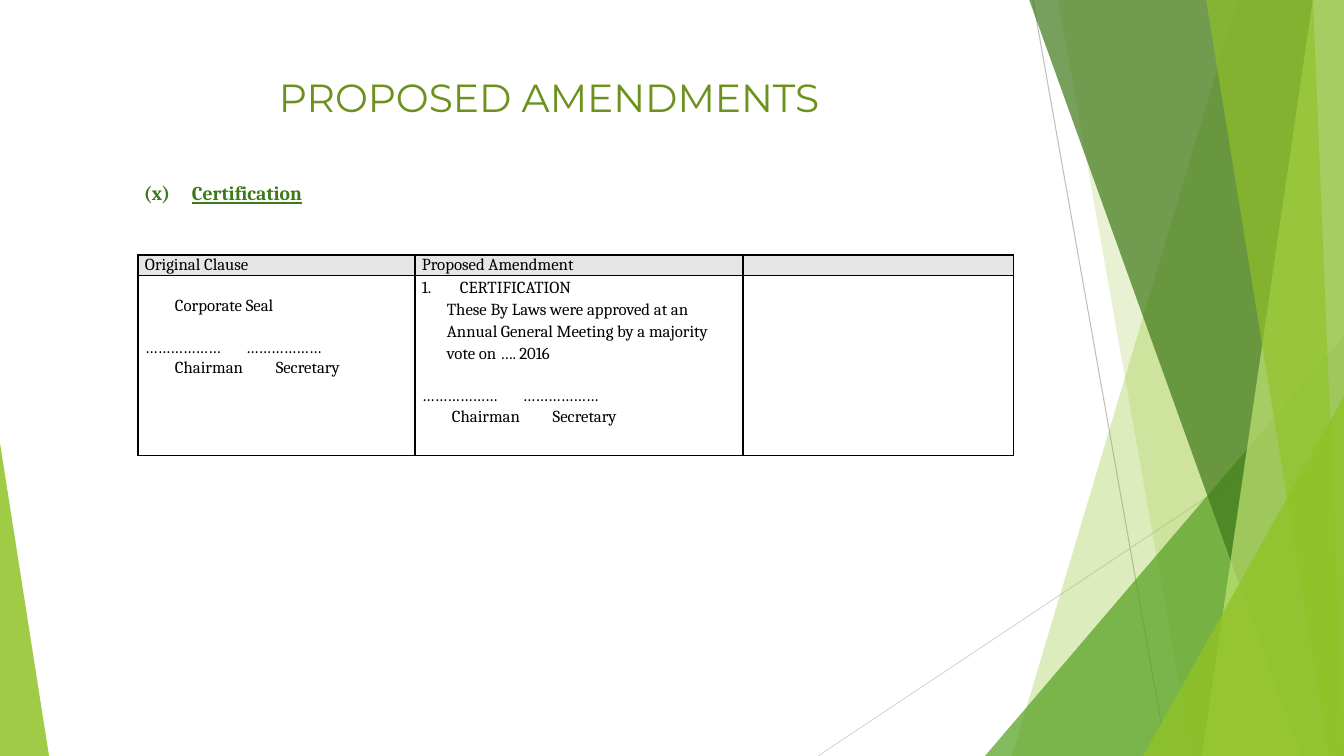
from lxml.etree import SubElement
from pptx import Presentation
from pptx.dml.color import RGBColor
from pptx.enum.shapes import MSO_CONNECTOR, MSO_SHAPE
from pptx.enum.text import MSO_ANCHOR, PP_ALIGN
from pptx.oxml.ns import qn
from pptx.util import Emu, Pt

SCALE = 914400 / 100.8
WIDTH, HEIGHT = 1344, 756
LIME, GREEN, FOREST, PALE = "90C226", "54A021", "3F7819", "C0E474"
BLACK, HEADER_GREY = "000000", "E7E6E6"


def px(length):
    return Emu(round(length * SCALE))


def colour(value):
    return RGBColor.from_string(value)


class SlideBuilder:
    """Holds the text style and the current slide."""

    body_font = "Cambria"
    title_font = "Montserrat"

    def __init__(self, page):
        self.page = page
        self.shapes = page.shapes

    def line(self, start, end, shade):
        connector = self.shapes.add_connector(
            MSO_CONNECTOR.STRAIGHT, *map(px, start + end))
        connector.line.color.rgb = colour(shade)
        connector.line.width = Pt(0.75)
        SubElement(connector._element.spPr, qn("a:effectLst"))

    def paint(self, shape, shade, opacity):
        shape.shadow.inherit = False
        shape.fill.solid()
        shape.fill.fore_color.rgb = colour(shade)
        shape.line.fill.background()
        tint = shape._element.spPr.find(qn("a:solidFill"))[0]
        SubElement(tint, qn("a:alpha"), val=str(opacity * 1000))

    def band(self, top_left, bottom_left, shade, opacity, top_right=WIDTH):
        """A full-height panel that reaches the right edge."""
        outline = self.shapes.build_freeform(top_left, -1, SCALE)
        outline.add_line_segments(
            [(top_right, -1), (WIDTH, HEIGHT), (bottom_left, HEIGHT)])
        self.paint(outline.convert_to_shape(), shade, opacity)

    def triangle(self, left, top, width, apex, shade, opacity):
        """A triangle that stands on the bottom edge."""
        shape = self.shapes.add_shape(
            MSO_SHAPE.ISOSCELES_TRIANGLE,
            *map(px, (left, top, width, HEIGHT - top)))
        shape.adjustments[0] = apex
        self.paint(shape, shade, opacity)

    def style(self, para, size, shade, font=None, bold=False):
        para.font.name = font or self.body_font
        para.font.size = Pt(size)
        para.font.bold = bold
        para.font.color.rgb = colour(shade)

    def text_box(self, left, top, width, height, anchor):
        box = self.shapes.add_textbox(*map(px, (left, top, width, height)))
        box.text_frame.word_wrap = True
        box.text_frame.vertical_anchor = anchor
        return box.text_frame.paragraphs[0]

    def title(self, text, *place):
        para = self.text_box(*place, MSO_ANCHOR.TOP)
        para.text = text
        para.alignment = PP_ALIGN.CENTER
        self.style(para, 28, "6C921D", self.title_font)

    def heading(self, number, text, *place):
        para = self.text_box(*place, MSO_ANCHOR.MIDDLE)
        para.add_run().text = number + "\t"
        span = para.add_run()
        span.text = text
        span.font.underline = True
        self.style(para, 14, FOREST, bold=True)
        self.tab_stop(para, 48)

    def tab_stop(self, para, position):
        properties = para._p.get_or_add_pPr()
        stops = properties.makeelement(qn("a:tabLst"), {})
        SubElement(stops, qn("a:tab"), pos=str(px(position)), algn="l")
        defaults = properties.find(qn("a:defRPr"))
        if defaults is None:
            properties.append(stops)
        else:
            defaults.addprevious(stops)

    def table(self, left, top, columns, rows):
        frame = self.shapes.add_table(
            len(rows), len(columns),
            *map(px, (left, top, sum(columns), sum(rows))))
        table = frame.table
        table.first_row = table.horz_banding = False
        for column, width in zip(table.columns, columns):
            column.width = px(width)
        for row, height in zip(table.rows, rows):
            row.height = px(height)
        for cell in table.iter_cells():
            cell.margin_left = cell.margin_right = px(7)
            cell.margin_top = cell.margin_bottom = 0
            self.borders(cell)
            cell.fill.background()
            SubElement(cell.text_frame.paragraphs[0]._p,
                       qn("a:endParaRPr"), sz="1200")
        return table

    def borders(self, cell):
        properties = cell._tc.get_or_add_tcPr()
        for side in ("lnL", "lnR", "lnT", "lnB"):
            edge = SubElement(properties, qn("a:" + side), w=str(Pt(1)))
            fill = SubElement(edge, qn("a:solidFill"))
            SubElement(fill, qn("a:srgbClr"), val=BLACK)

    def header(self, cell, text):
        cell.fill.solid()
        cell.fill.fore_color.rgb = colour(HEADER_GREY)
        if text:
            para = cell.text_frame.paragraphs[0]
            para.text = text
            self.style(para, 12, BLACK)

    def clause(self, cell, lines):
        """Lines are (text, indent, line spacing, gap before, kind)."""
        frame = cell.text_frame
        for index, (text, indent, spacing, gap, kind) in enumerate(lines):
            para = frame.add_paragraph() if index else frame.paragraphs[0]
            para.text = text
            para.line_spacing = spacing
            para.space_before = Pt(gap)
            self.style(para, 12, BLACK)
            properties = para._p.get_or_add_pPr()
            properties.set("marL", str(px(indent)))
            properties.set("indent", "0")
            if kind == "numbered":
                properties.set("indent", str(-px(indent)))
                bullet = properties.makeelement(
                    qn("a:buAutoNum"), {"type": "arabicPeriod"})
                properties.find(qn("a:defRPr")).addprevious(bullet)
            elif kind == "dotted":
                self.tab_stop(para, 111)


def main():
    deck = Presentation()
    deck.slide_width, deck.slide_height = px(WIDTH), px(HEIGHT)
    builder = SlideBuilder(deck.slides.add_slide(deck.slide_layouts[6]))

    # Facet decoration, back to front
    builder.line((1033, 0), (1167, HEIGHT), "BFBFBF")
    builder.line((WIDTH, 406), (818, HEIGHT), "D9D9D9")
    builder.band(1238, 1012, LIME, 30)
    builder.band(1058, 1192, LIME, 20)
    builder.triangle(985, 336, 359, 1, GREEN, 72)
    builder.band(1029, 1301, FOREST, 70)
    builder.band(1313, 1202, PALE, 70)
    builder.band(1206, 1329, LIME, 65, top_right=1313)
    builder.triangle(1143, 396, 201, 1, LIME, 80)
    builder.triangle(0, 443, 49, 0, LIME, 85)

    # Title and section heading
    builder.title("PROPOSED AMENDMENTS", 75, 68, 948, 68)
    builder.heading("(x)", "Certification", 134, 176, 556, 34)

    # Comparison of clauses
    table = builder.table(138, 255, (277, 328, 271), (20, 180))
    for column, text in enumerate(("Original Clause", "Proposed Amendment", "")):
        builder.header(table.cell(0, column), text)

    signatures = [
        ("………………\t………………", 0, 1.07, 15, "dotted"),
        ("Chairman\tSecretary", 30, 1.07, 0, "plain"),
    ]
    seal = table.cell(1, 0)
    seal.margin_top = px(20)
    builder.clause(seal, [("Corporate Seal", 30, 1.07, 0, "plain")] + signatures)
    builder.clause(table.cell(1, 1), [
        ("CERTIFICATION", 38, 1.15, 0, "numbered"),
        ("These By Laws were approved at an Annual General Meeting "
         "by a majority vote on …. 2016", 25, 1.15, 0, "plain"),
    ] + signatures)

    deck.save("out.pptx")


if __name__ == "__main__":
    main()
